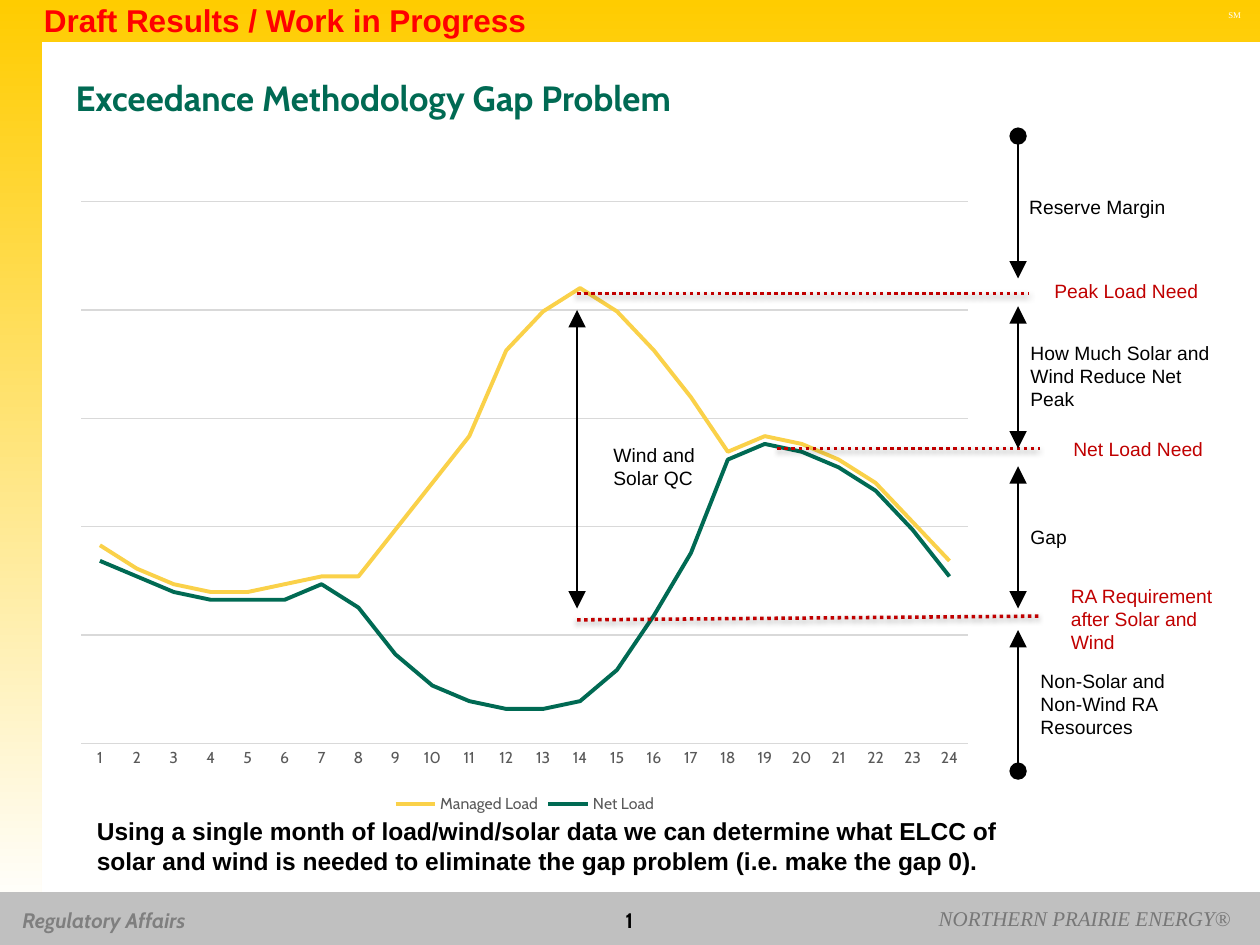
"""Build the slide on the exceedance methodology gap problem."""
from lxml.etree import SubElement
from pptx import Presentation
from pptx.chart.data import CategoryChartData
from pptx.dml.color import RGBColor
from pptx.enum.chart import XL_CHART_TYPE as ChartType
from pptx.enum.chart import XL_LEGEND_POSITION as LegendPosition
from pptx.enum.chart import XL_TICK_LABEL_POSITION as LabelPosition
from pptx.enum.chart import XL_TICK_MARK as TickMark
from pptx.enum.dml import MSO_LINE as Dash
from pptx.enum.shapes import MSO_CONNECTOR as Connector
from pptx.enum.shapes import MSO_SHAPE as Shape
from pptx.enum.text import MSO_ANCHOR as Anchor
from pptx.enum.text import PP_ALIGN as Align
from pptx.oxml.ns import qn
from pptx.util import Inches, Pt

BLACK = RGBColor(0x00, 0x00, 0x00)
WHITE = RGBColor(0xFF, 0xFF, 0xFF)
RED = RGBColor(0xFF, 0x00, 0x00)
DARK_RED = RGBColor(0xC0, 0x00, 0x00)
GREEN = RGBColor(0x00, 0x6A, 0x53)
YELLOW = RGBColor(0xFA, 0xD1, 0x49)
GOLD = RGBColor(0xFF, 0xCC, 0x00)
BAND_GRAY = RGBColor(0xC0, 0xC0, 0xC0)
GRID_GRAY = RGBColor(0xD9, 0xD9, 0xD9)
LABEL_GRAY = RGBColor(0x59, 0x59, 0x59)
FOOTER_GRAY = RGBColor(0x7F, 0x7F, 0x7F)
NAME_GRAY = RGBColor(0x77, 0x77, 0x77)

deck = Presentation()
deck.slide_width, deck.slide_height = Inches(10), Inches(7.5)
page = deck.slides.add_slide(deck.slide_layouts[5])
shapes = page.shapes


def style_font(font, color, **formats):
    font.color.rgb = color
    for name, value in formats.items():
        setattr(font, name, value)


def add_line(start, end, color, width):
    line = shapes.add_connector(Connector.STRAIGHT, *map(Inches, start + end))
    line.line.color.rgb = color
    line.line.width = Pt(width)
    effects = SubElement(line._element.spPr, qn("a:effectLst"))
    return line, effects


frame = shapes.build_freeform(0, Inches(7.25))
corners = [(0, 0), (10, 0), (10, 0.33), (0.33, 0.33), (0.33, 7.25)]
frame.add_line_segments([(Inches(x), Inches(y)) for x, y in corners], close=True)
border = frame.convert_to_shape()
border.fill.gradient()
border.fill.gradient_angle = 270
for stop, color in zip(border.fill.gradient_stops, (GOLD, WHITE)):
    stop.color.rgb = color

band = shapes.add_shape(Shape.RECTANGLE, 0, Inches(7.08), Inches(10), Inches(0.42))
band.fill.solid()
band.fill.fore_color.rgb = BAND_GRAY
for shape in (border, band):
    shape.line.fill.background()
    shape.shadow.inherit = False

title = shapes.title
title.left, title.top, title.width, title.height = map(Inches, (0.5, 0.38, 9, 0.79))
title.text_frame.vertical_anchor = Anchor.MIDDLE
title.text_frame.text = "Exceedance Methodology Gap Problem"
title_para = title.text_frame.paragraphs[0]
title_para.alignment = Align.LEFT
style_font(title_para.font, GREEN, name="Cabin", size=Pt(20), bold=True)

loads = [
    ("Managed Load", YELLOW, (67, 64, 62, 61, 61, 62, 63, 63, 69, 75, 81, 92,
                              97, 100, 97, 92, 86, 79, 81, 80, 78, 75, 70, 65)),
    ("Net Load", GREEN, (65, 63, 61, 60, 60, 60, 62, 59, 53, 49, 47, 46,
                         46, 47, 51, 58, 66, 78, 80, 79, 77, 74, 69, 63)),
]
data = CategoryChartData()
data.categories = [str(hour) for hour in range(1, 25)]
for name, color, values in loads:
    data.add_series(name, values)
chart = shapes.add_chart(
    ChartType.LINE, Inches(0.5), Inches(1.5), Inches(7.33), Inches(5), data).chart
chart.has_title = False
style_font(chart.font, BLACK, name="Cabin", size=Pt(10))
chart.plots[0].vary_by_categories = False
for series, (name, color, values) in zip(chart.plots[0].series, loads):
    series.smooth = False
    series.format.line.color.rgb = color
    series.format.line.width = Pt(2.25)

hours = chart.category_axis
hours.major_tick_mark = TickMark.NONE
hours.tick_label_position = LabelPosition.NEXT_TO_AXIS
style_font(hours.tick_labels.font, LABEL_GRAY, name="Cabin", size=Pt(9))
levels = chart.value_axis
for name, value in {"minimum_scale": 41.6, "maximum_scale": 111.1,
                    "major_unit": 13.9, "visible": False,
                    "has_major_gridlines": True}.items():
    setattr(levels, name, value)
for line in (hours.format.line, levels.major_gridlines.format.line):
    line.color.rgb = GRID_GRAY
    line.width = Pt(0.75)

chart.has_legend = True
chart.legend.position = LegendPosition.BOTTOM
chart.legend.include_in_layout = False
style_font(chart.legend.font, LABEL_GRAY, name="Cabin", size=Pt(9))

plot_area = chart._chartSpace.chart.plotArea
for old_layout in plot_area.findall(qn("c:layout")):
    plot_area.remove(old_layout)
layout = SubElement(plot_area, qn("c:layout"))
plot_area.insert(0, layout)
manual = SubElement(layout, qn("c:manualLayout"))
for tag, value in {"layoutTarget": "inner", "xMode": "edge", "yMode": "edge",
                   "x": "0.02", "y": "0.02", "w": "0.96", "h": "0.86"}.items():
    SubElement(manual, qn(f"c:{tag}")).set("val", value)

for start, end in [((4.58, 2.33), (8.17, 2.33)),
                   ((6.17, 3.56), (8.25, 3.56)),
                   ((4.58, 4.92), (8.25, 4.89))]:
    level, effects = add_line(start, end, DARK_RED, 2)
    level.line.dash_style = Dash.ROUND_DOT
    shadow = SubElement(effects, qn("a:outerShdw"), blurRad="40000",
                        dist="20000", dir="5400000", rotWithShape="0")
    shade = SubElement(shadow, qn("a:srgbClr"), val=str(BLACK))
    SubElement(shade, qn("a:alpha"), val="38000")

for x, top, bottom, head, tail in [(4.58, 2.46, 4.83, "triangle", "triangle"),
                                   (8.08, 1.08, 2.21, "oval", "triangle"),
                                   (8.08, 2.43, 3.56, "triangle", "triangle"),
                                   (8.08, 3.7, 4.83, "triangle", "triangle"),
                                   (8.08, 5, 6.12, "triangle", "oval")]:
    arrow, effects = add_line((x, top), (x, bottom), BLACK, 1.5)
    outline = arrow.line._get_or_add_ln()
    for tag, style in (("a:headEnd", head), ("a:tailEnd", tail)):
        SubElement(outline, qn(tag), type=style, w="lg", len="lg")

label = {"name": "Arial", "size": Pt(11)}
footer = {"name": "Cabin", "size": Pt(12), "bold": True}
texts = [
    ("Reserve Margin", (8.07, 1.5, 1.43, 0.29), True, Align.LEFT, BLACK, label),
    ("How Much Solar and Wind Reduce Net Peak", (8.08, 2.66, 1.67, 0.66), True,
     Align.LEFT, BLACK, label),
    ("Gap", (8.08, 4.12, 1.43, 0.29), True, Align.LEFT, BLACK, label),
    ("Non-Solar and Non-Wind RA Resources", (8.16, 5.26, 1.43, 0.66), True,
     Align.LEFT, BLACK, label),
    ("Wind and Solar QC", (4.77, 3.47, 0.88, 0.47), True, Align.LEFT, BLACK, label),
    ("Peak Load Need", (8.27, 2.17, 1.35, 0.29), False, Align.LEFT, DARK_RED, label),
    ("Net Load Need", (8.42, 3.42, 1.24, 0.29), False, Align.LEFT, DARK_RED, label),
    ("RA Requirement after Solar and Wind", (8.4, 4.59, 1.35, 0.66), True,
     Align.LEFT, DARK_RED, label),
    ("Using a single month of load/wind/solar data we can determine what ELCC of "
     "solar and wind is needed to eliminate the gap problem (i.e. make the gap 0).",
     (0.67, 6.43, 7.49, 0.57), True, Align.LEFT, BLACK,
     {"name": "Arial", "size": Pt(14), "bold": True}),
    ("Draft Results / Work in Progress", (0.25, -0.04, 4.07, 0.4), False,
     Align.LEFT, RED, {"name": "Arial", "size": Pt(18), "bold": True}),
    ("Regulatory Affairs", (0.08, 7.15, 1.74, 0.3), False, Align.LEFT,
     FOOTER_GRAY, {**footer, "italic": True}),
    ("1", (3.83, 7.14, 2.33, 0.33), True, Align.CENTER, BLACK, footer),
    ("NORTHERN PRAIRIE ENERGY®", (7.06, 7.14, 2.81, 0.3), False, Align.RIGHT,
     NAME_GRAY, {"name": "Times New Roman", "size": Pt(12), "italic": True}),
    ("SM", (9.65, 0.03, 0.3, 0.18), False, Align.LEFT, WHITE,
     {"name": "Times New Roman", "size": Pt(5)}),
]
for text, place, wrap, alignment, color, formats in texts:
    box = shapes.add_textbox(*map(Inches, place))
    box.text_frame.word_wrap = wrap
    box.text_frame.vertical_anchor = Anchor.MIDDLE if text == "1" else Anchor.TOP
    para = box.text_frame.paragraphs[0]
    para.alignment = alignment
    span = para.add_run()
    span.text = text
    style_font(span.font, color, **formats)

deck.save("out.pptx")
